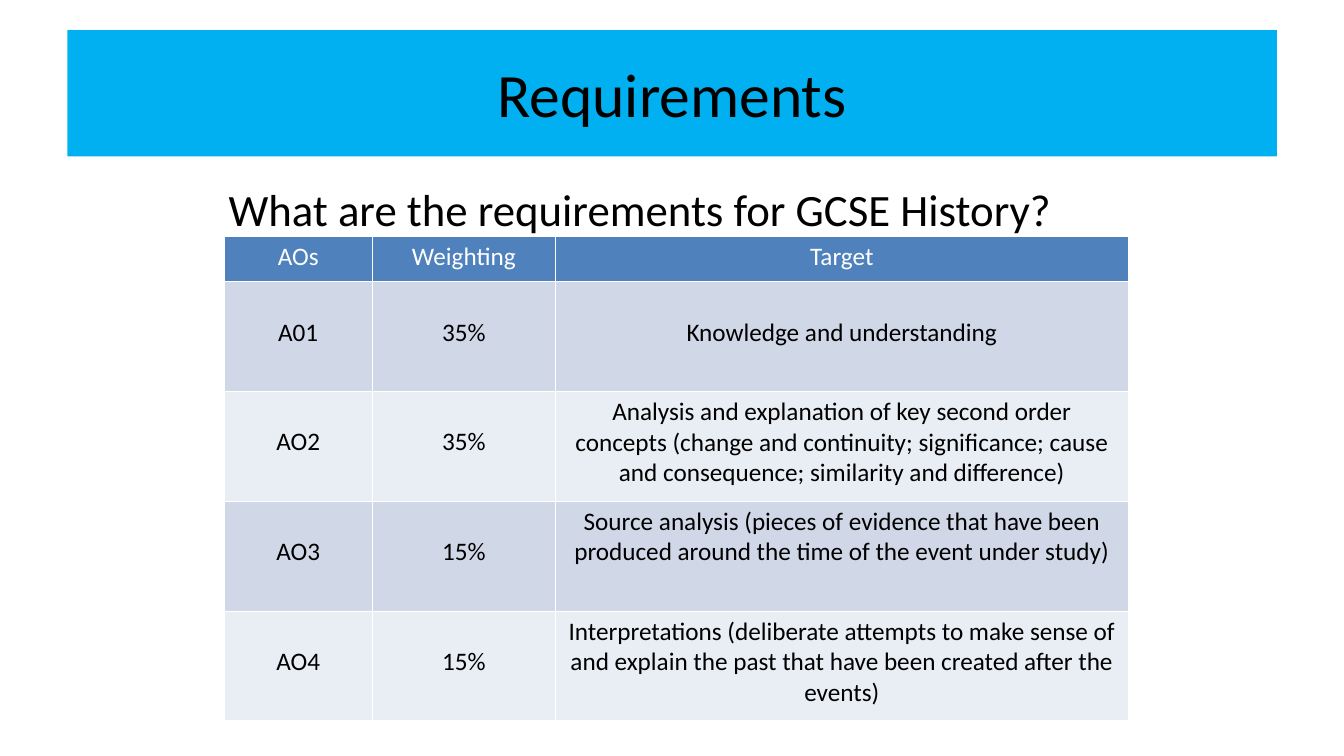
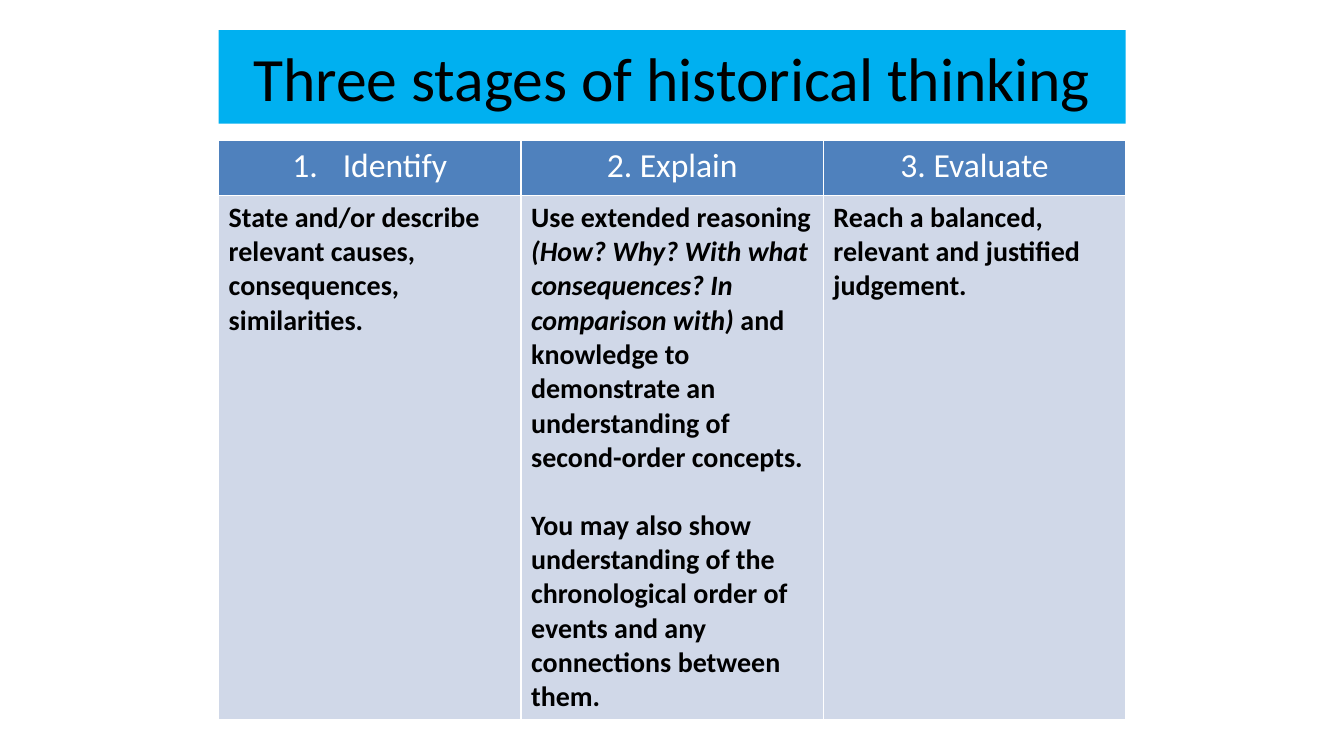
"""Build two slides on history exam requirements and historical thinking."""
from lxml import etree
from pptx import Presentation
from pptx.dml.color import RGBColor
from pptx.enum.shapes import MSO_SHAPE
from pptx.enum.text import MSO_ANCHOR, PP_ALIGN
from pptx.oxml.ns import qn
from pptx.util import Cm, Pt

RECTANGLE = MSO_SHAPE.RECTANGLE
MIDDLE = MSO_ANCHOR.MIDDLE
LEFT, CENTER = PP_ALIGN.LEFT, PP_ALIGN.CENTER

FONT = "Calibri"
BLACK, WHITE = "000000", "FFFFFF"
BAND, HEADER = "00B0F0", "4F81BD"
ROW_FILLS = ("D0D8E8", "E9EDF4")
ONE_LINE_TOP = 0.9

OBJECTIVES = [
    ("A01", "35%", "Knowledge and understanding"),
    ("AO2", "35%", "Analysis and explanation of key second order concepts "
     "(change and continuity; significance; cause and consequence; "
     "similarity and difference)"),
    ("AO3", "15%", "Source analysis (pieces of evidence that have been "
     "produced around the time of the event under study)"),
    ("AO4", "15%", "Interpretations (deliberate attempts to make sense of and "
     "explain the past that have been created after the events)"),
]
IDENTIFY = "State and/or describe relevant causes, consequences, similarities."
EXPLAIN = [
    ("Use extended reasoning ", False),
    ("(How? Why? With what consequences? In comparison with) ", True),
    ("and knowledge to demonstrate an understanding of second-order concepts.",
     False),
]
CHRONOLOGY = ("You may also show understanding of the chronological order of "
              "events and any connections between them.")
EVALUATE = "Reach a balanced, relevant and justified judgement."


def rgb(value):
    """Turn a hex string into a colour."""
    return RGBColor.from_string(value)


def write(paragraph, content, size, color=BLACK, align=LEFT, bold=False):
    """Fill a paragraph from a string or from (text, italic) pairs."""
    spans = [(content, False)] if isinstance(content, str) else content
    paragraph.alignment = align
    for text, italic in spans:
        run = paragraph.add_run()
        run.text = text
        run.font.name = FONT
        run.font.size = Pt(size)
        run.font.bold = bold
        run.font.italic = italic
        run.font.color.rgb = rgb(color)


def add_title(slide, text, left, width, height):
    """Draw the coloured title band."""
    band = slide.shapes.add_shape(
        RECTANGLE, Cm(left), Cm(0.76), Cm(width), Cm(height))
    band.shadow.inherit = False
    band.fill.solid()
    band.fill.fore_color.rgb = rgb(BAND)
    band.line.fill.background()
    band.text_frame.vertical_anchor = MIDDLE
    write(band.text_frame.paragraphs[0], text, 44, align=CENTER)


def add_question(slide, text):
    """Place the question above the table."""
    question = slide.shapes.add_textbox(
        Cm(5.51), Cm(4.45), Cm(22.86), Cm(1.47))
    question.text_frame.word_wrap = True
    write(question.text_frame.paragraphs[0], text, 32)


def style_cell(cell, fill):
    """Give a cell thin white borders and a fill."""
    properties = cell._tc.get_or_add_tcPr()
    for side in ("a:lnL", "a:lnR", "a:lnT", "a:lnB"):
        border = etree.SubElement(properties, qn(side), w=str(Pt(1)))
        paint = etree.SubElement(border, qn("a:solidFill"))
        etree.SubElement(paint, qn("a:srgbClr"), val=WHITE)
    cell.fill.solid()
    cell.fill.fore_color.rgb = rgb(fill)


def number_paragraph(paragraph):
    """Number a paragraph with a hanging indent."""
    properties = paragraph._p.get_or_add_pPr()
    properties.set("marL", str(Cm(1.27)))
    properties.set("indent", str(-Cm(1.27)))
    etree.SubElement(properties, qn("a:buFont"), typeface="+mj-lt")
    etree.SubElement(properties, qn("a:buAutoNum"), type="arabicPeriod")


def add_table(slide, left, top, widths, heights, headings, heading_size):
    """Add a banded table with its heading row filled in."""
    table = slide.shapes.add_table(
        len(heights), len(widths), Cm(left), Cm(top),
        Cm(sum(widths)), Cm(sum(heights))).table
    for column, width in zip(table.columns, widths):
        column.width = Cm(width)
    for index, (row, height) in enumerate(zip(table.rows, heights)):
        row.height = Cm(height)
        fill = ROW_FILLS[(index - 1) % 2] if index else HEADER
        for cell in row.cells:
            style_cell(cell, fill)
    for cell, heading in zip(table.rows[0].cells, headings):
        write(cell.text_frame.paragraphs[0], heading, heading_size,
              WHITE, CENTER)
    return table


def build_requirements(slide):
    """Build the slide of assessment objectives."""
    add_title(slide, "Requirements", 1.7, 30.48, 3.18)
    add_question(slide, "What are the requirements for GCSE History?")
    table = add_table(slide, 5.65, 5.95, [3.73, 4.62, 14.43],
                      [1.14] + [2.77] * len(OBJECTIVES),
                      ["AOs", "Weighting", "Target"], 18)
    for row, objective in enumerate(OBJECTIVES, 1):
        for column, text in enumerate(objective):
            cell = table.cell(row, column)
            if len(text) < 40:
                cell.margin_top = Cm(ONE_LINE_TOP)
            write(cell.text_frame.paragraphs[0], text, 18, align=CENTER)


def build_stages(slide):
    """Build the slide of the three thinking stages."""
    add_title(slide, "Three stages of historical thinking", 5.51, 22.86, 2.36)
    table = add_table(slide, 5.51, 3.53, [7.62] * 3, [1.4, 13.2],
                      ["Identify", "2. Explain", "3. Evaluate"], 24)
    number_paragraph(table.cell(0, 0).text_frame.paragraphs[0])
    for column, content in enumerate((IDENTIFY, EXPLAIN, EVALUATE)):
        write(table.cell(1, column).text_frame.paragraphs[0], content, 20,
              bold=True)
    chronology = table.cell(1, 1).text_frame.add_paragraph()
    chronology.space_before = Pt(24)
    write(chronology, CHRONOLOGY, 20, bold=True)


def main():
    """Create and save the presentation."""
    presentation = Presentation()
    presentation.slide_width = Cm(33.87)
    presentation.slide_height = Cm(19.05)
    blank = presentation.slide_layouts[6]
    for build in (build_requirements, build_stages):
        build(presentation.slides.add_slide(blank))
    presentation.save("out.pptx")


if __name__ == "__main__":
    main()
